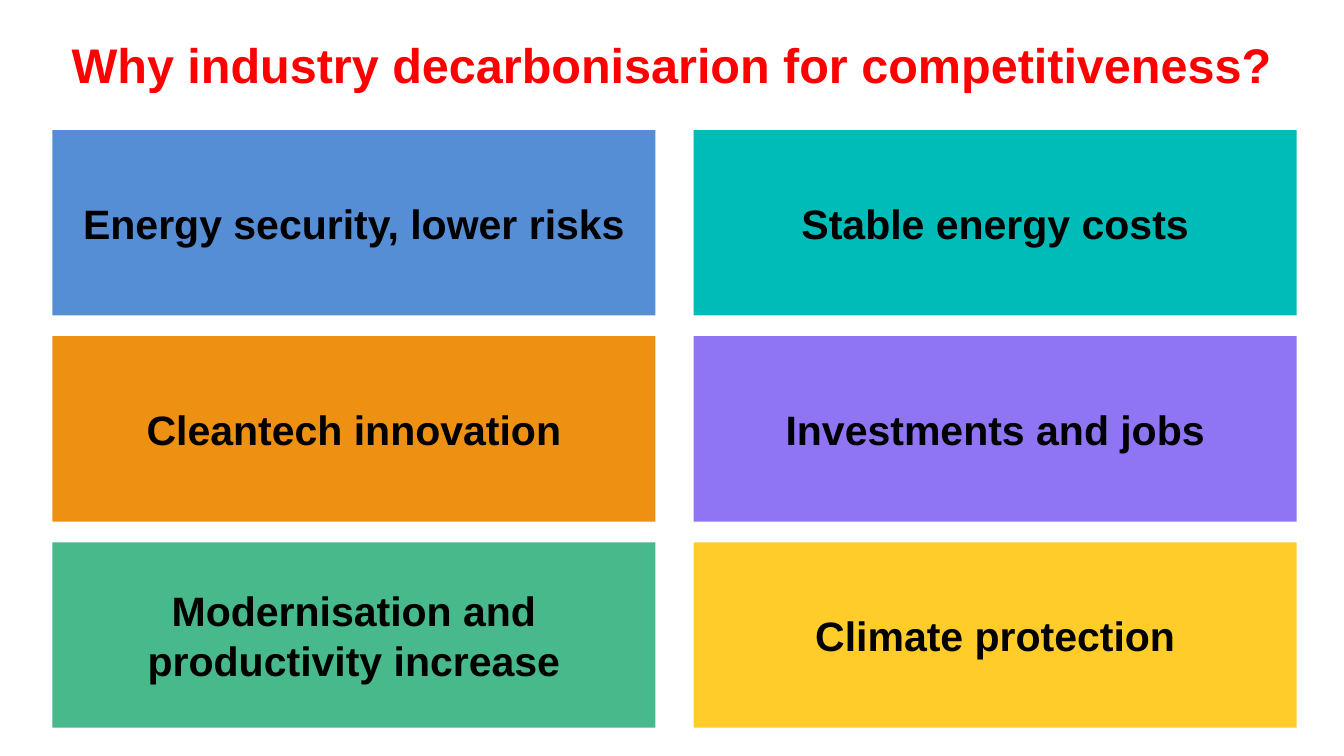
from pptx import Presentation
from pptx.dml.color import RGBColor
from pptx.enum.shapes import MSO_SHAPE
from pptx.enum.text import MSO_ANCHOR, MSO_AUTO_SIZE, PP_ALIGN
from pptx.util import Inches, Pt

RECT = MSO_SHAPE.RECTANGLE
MIDDLE = MSO_ANCHOR.MIDDLE
NO_FIT = MSO_AUTO_SIZE.NONE
CENTER = PP_ALIGN.CENTER

THEME = {
    "face": "Arial",
    "title": {"size": 34.7, "color": "FF0000"},
    "card": {"size": 29.3, "color": "000000"},
    "blue": "558ED5",
    "teal": "00BCB8",
    "orange": "EE9012",
    "violet": "8F74F4",
    "green": "47B98B",
    "yellow": "FFCC29",
}

CARDS = [
    ("Energy security, lower risks", "blue"),
    ("Stable energy costs", "teal"),
    ("Cleantech innovation", "orange"),
    ("Investments and jobs", "violet"),
    ("Modernisation and productivity increase", "green"),
    ("Climate protection", "yellow"),
]
LEFT, TOP = 0.52, 1.29
WIDTH, HEIGHT = 5.98, 1.84
STEP_X, STEP_Y = 6.36, 2.045


def set_all(item, values):
    for name, value in values.items():
        setattr(item, name, value)


def write(shape, text, style, inset):
    frame = shape.text_frame
    frame.text = text
    set_all(frame, {
        "word_wrap": True,
        "auto_size": NO_FIT,
        "vertical_anchor": MIDDLE,
        "margin_left": Inches(inset[0]),
        "margin_right": Inches(inset[0]),
        "margin_top": Inches(inset[1]),
        "margin_bottom": Inches(inset[1]),
    })
    line = frame.paragraphs[0]
    set_all(line, {"alignment": CENTER, "line_spacing": 1.0})
    font = line.runs[0].font
    set_all(font, {"name": THEME["face"], "size": Pt(style["size"]), "bold": True})
    font.color.rgb = RGBColor.from_string(style["color"])


deck = Presentation()
set_all(deck, {"slide_width": Inches(13.33), "slide_height": Inches(7.5)})
slide = deck.slides.add_slide(deck.slide_layouts[5])

title = slide.shapes.title
set_all(title, {
    "left": Inches(0),
    "top": Inches(0.13),
    "width": Inches(13.33),
    "height": Inches(1.02),
})
write(title, "Why industry decarbonisarion for competitiveness?", THEME["title"], (0.13, 0.07))

for index, (text, hue) in enumerate(CARDS):
    row, col = divmod(index, 2)
    card = slide.shapes.add_shape(
        RECT,
        Inches(LEFT + col * STEP_X),
        Inches(TOP + row * STEP_Y),
        Inches(WIDTH),
        Inches(HEIGHT),
    )
    card.shadow.inherit = False
    card.fill.solid()
    card.fill.fore_color.rgb = RGBColor.from_string(THEME[hue])
    card.line.fill.background()
    write(card, text, THEME["card"], (0.1, 0.05))

deck.save("out.pptx")
